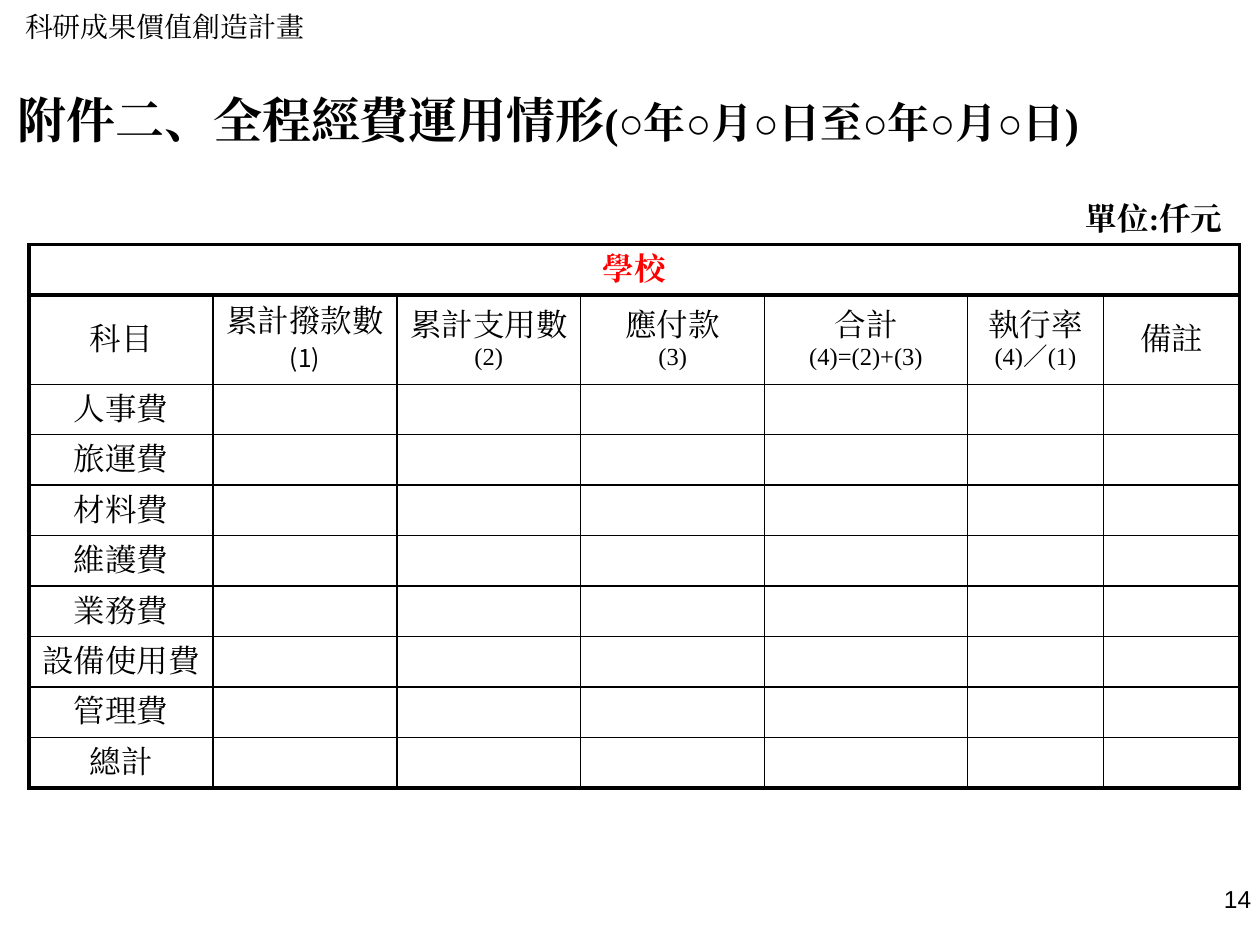
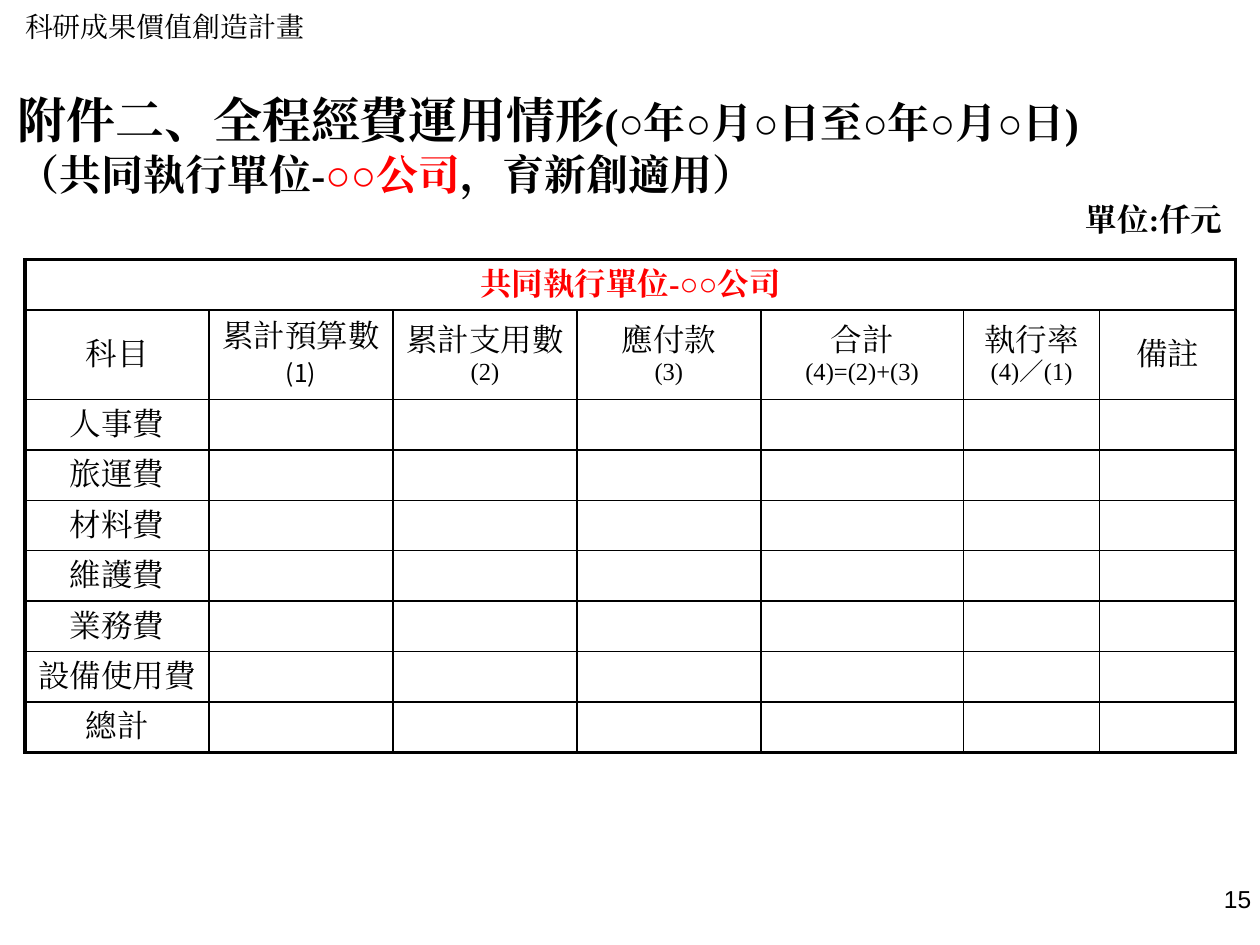
from dataclasses import dataclass
from typing import NamedTuple

from lxml.etree import SubElement
from pptx import Presentation
from pptx.dml.color import RGBColor
from pptx.enum.text import MSO_ANCHOR, MSO_AUTO_SIZE, PP_ALIGN
from pptx.oxml import parse_xml
from pptx.oxml.ns import nsdecls, qn
from pptx.slide import Slide
from pptx.table import _Cell
from pptx.text.text import TextFrame
from pptx.util import Pt


@dataclass(frozen=True)
class Theme:
    black: str = "000000"
    red: str = "FF0000"
    serif: str = "Times New Roman"
    sans: str = "Noto Sans CJK SC"
    sans_tc: str = "Noto Sans CJK TC"
    number_font: str = "Arial"
    east_asian: str = "Times New Roman"
    title: float = 28
    subtitle: float = 24
    body: float = 18
    running_head: float = 16
    small: float = 14
    thin: float = 1
    thick: float = 2.25


THEME = Theme()


class Run(NamedTuple):
    text: str
    size: float = THEME.body
    font: str = THEME.sans
    color: str = THEME.black
    bold: bool = False


class Box(NamedTuple):
    left: float
    top: float
    width: float
    height: float


Paragraphs = list[list[Run]]


@dataclass(frozen=True)
class BudgetSlide:
    number: int
    title: Paragraphs
    title_height: float
    unit_top: float
    table_left: float
    table_top: float
    owner: str
    first_amount: str
    items: list[str]
    owner_rule: float  # line width below the owner row


HEADER_BOX = Box(7.2, 2.2, 176.4, 26.6)
NUMBER_BOX = Box(649.4, 501.8, 72.7, 37.4)
COLUMN_WIDTHS = [105.1] * 4 + [115.9] + [77.8] * 2
ROW_HEIGHT, HEADING_HEIGHT = 28.8, 51.1


def bold(text: str, size: float, color: str = THEME.black) -> Run:
    return Run(text, size, THEME.serif, color, True)


def small(text: str, font: str = THEME.serif) -> Run:
    return Run(text, THEME.small, font)


def write(tf: TextFrame, paragraphs: Paragraphs, align: PP_ALIGN) -> None:
    for i, runs in enumerate(paragraphs):
        p = tf.paragraphs[0] if i == 0 else tf.add_paragraph()
        p.alignment = align
        for run in runs:
            r = p.add_run()
            r.text = run.text
            r.font.size = Pt(run.size)
            r.font.bold = run.bold
            r.font.color.rgb = RGBColor.from_string(run.color)
            r.font.name = run.font
            SubElement(r.font._element, qn("a:ea"), typeface=THEME.east_asian)


def add_text(s: Slide, box: Box, paragraphs: Paragraphs,
             align: PP_ALIGN = PP_ALIGN.LEFT, grow: bool = True) -> None:
    tf = s.shapes.add_textbox(*map(Pt, box)).text_frame
    tf.word_wrap = True
    tf.auto_size = MSO_AUTO_SIZE.SHAPE_TO_FIT_TEXT if grow else MSO_AUTO_SIZE.NONE
    write(tf, paragraphs, align)


def set_borders(cell: _Cell, widths: dict[str, float]) -> None:
    """Draw the cell's sides, given in the order L, R, T, B."""
    cell.fill.background()
    tc_pr = cell._tc.get_or_add_tcPr()
    for i, (side, width) in enumerate(widths.items()):
        tc_pr.insert(i, parse_xml(
            f'<a:ln{side} {nsdecls("a")} w="{Pt(width)}"><a:solidFill>'
            f'<a:srgbClr val="{THEME.black}"/></a:solidFill></a:ln{side}>'))


def column_headings(first_amount: str) -> list[Paragraphs]:
    return [
        [[Run("科目")]],
        [[Run(first_amount), small("(1)", THEME.sans)]],
        [[Run("累計支用數"), small("(2)")]],
        [[Run("應付款", font=THEME.serif)], [small("(3)")]],
        [[Run("合計")], [small("(4)=(2)+(3)")]],
        [[Run("執行率"), small("(4)／(1)")]],
        [[Run("備註")]],
    ]


def item_label(item: str) -> Paragraphs:
    tc_items = ("旅運費", "材料費", "維護費")
    return [[Run(item, font=THEME.sans_tc if item in tc_items else THEME.sans)]]


def add_budget_table(s: Slide, spec_: BudgetSlide) -> None:
    heights = [ROW_HEIGHT, HEADING_HEIGHT] + [ROW_HEIGHT] * len(spec_.items)
    last_row, last_col = len(heights) - 1, len(COLUMN_WIDTHS) - 1
    box = Box(spec_.table_left, spec_.table_top, sum(COLUMN_WIDTHS), sum(heights))
    table = s.shapes.add_table(len(heights), len(COLUMN_WIDTHS), *map(Pt, box)).table
    table.first_row = table.horz_banding = False
    for column, width in zip(table.columns, COLUMN_WIDTHS):
        column.width = Pt(width)
    for row, height in zip(table.rows, heights):
        row.height = Pt(height)
    table.cell(0, 0).merge(table.cell(0, last_col))

    contents = {(0, 0): [[bold(spec_.owner, THEME.body, THEME.red)]]}
    for c, heading in enumerate(column_headings(spec_.first_amount)):
        contents[1, c] = heading
    for r, item in enumerate(spec_.items, start=2):
        contents[r, 0] = item_label(item)

    horizontal = [THEME.thick, spec_.owner_rule] + [THEME.thin] * (last_row - 1) + [THEME.thick]
    vertical = [THEME.thick] + [THEME.thin] * last_col + [THEME.thick]
    for r in range(last_row + 1):
        for c in range(last_col + 1):
            cell = table.cell(r, c)
            right = THEME.thick if r == 0 else vertical[c + 1]
            set_borders(cell, {"L": vertical[c], "R": right,
                               "T": horizontal[r], "B": horizontal[r + 1]})
            cell.vertical_anchor = MSO_ANCHOR.MIDDLE
            if (r, c) in contents:
                write(cell.text_frame, contents[r, c], PP_ALIGN.CENTER)


def add_budget_slide(prs: Presentation, budget: BudgetSlide) -> None:
    s = prs.slides.add_slide(prs.slide_layouts[6])
    add_text(s, HEADER_BOX, [[Run("科研成果價值創造計畫", THEME.running_head)]])
    add_text(s, Box(2.9, 47.5, 684.7, budget.title_height), budget.title)
    add_budget_table(s, budget)
    add_text(s, Box(598.3, budget.unit_top, 107.3, 28.8),
             [[bold("單位:仟元", THEME.body)]], PP_ALIGN.RIGHT)
    add_text(s, NUMBER_BOX, [[small(str(budget.number), THEME.number_font)]],
             PP_ALIGN.RIGHT, grow=False)


TITLE_LINE = [bold("附件二、全程經費運用情形", THEME.title),
              bold("(○年○月○日至○年○月○日)", THEME.subtitle)]
PARTNER_LINE = [bold("（共同執行單位-", THEME.subtitle),
                bold("○○公司", THEME.subtitle, THEME.red),
                bold("，育新創適用）", THEME.subtitle)]
COMMON_ITEMS = ["人事費", "旅運費", "材料費", "維護費", "業務費", "設備使用費"]

BUDGETS = [
    BudgetSlide(14, [TITLE_LINE], 41, 110.2, 16.6, 139.7, "學校", "累計撥款數",
                COMMON_ITEMS + ["管理費", "總計"], THEME.thick),
    BudgetSlide(15, [TITLE_LINE, PARTNER_LINE], 70.6, 110.9, 14.4, 148.3,
                "共同執行單位-○○公司", "累計預算數",
                COMMON_ITEMS + ["總計"], THEME.thin),
]


def main() -> None:
    prs = Presentation()
    prs.slide_width, prs.slide_height = Pt(720), Pt(540)
    for budget in BUDGETS:
        add_budget_slide(prs, budget)
    prs.save("out.pptx")


if __name__ == "__main__":
    main()
